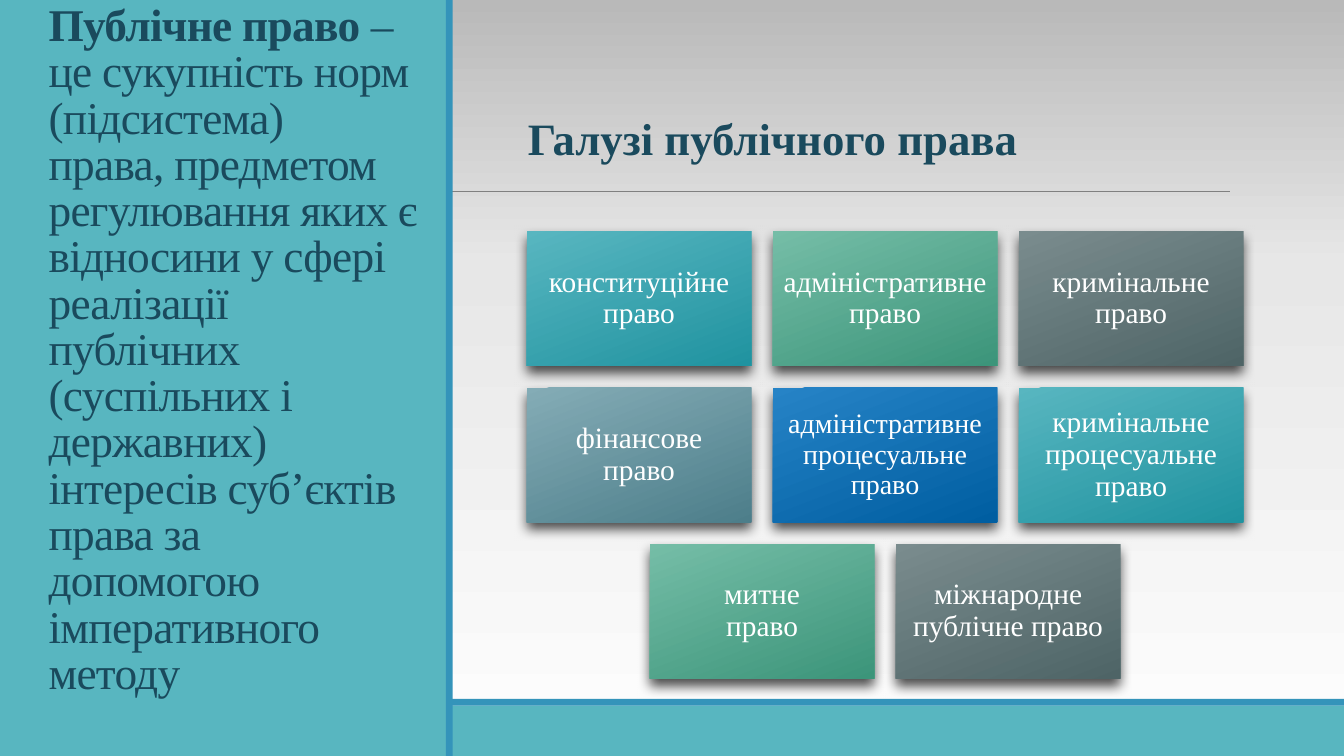
from copy import deepcopy

from lxml.etree import SubElement
from pptx import Presentation
from pptx.dml.color import RGBColor
from pptx.enum.shapes import MSO_CONNECTOR as Connector, MSO_SHAPE as Shape
from pptx.enum.text import MSO_ANCHOR as Anchor, MSO_AUTO_SIZE as AutoSize, PP_ALIGN as Align
from pptx.oxml.ns import qn
from pptx.util import Cm, Pt

COLORS = {
    "panel": "58B6C0", "edge": "3494BA", "rule": "808080",
    "ink": "1A4A5D", "white": "FFFFFF", "shadow": "000000",
}
BACKDROP = [(0, "FEFEFE"), (0.65, "E7E7E7"), (1, "B9B9B9")]
CARD_GRADIENTS = [
    ("58B6C0", "2093A0"), ("75BDA7", "3C957A"), ("7A8C8E", "4E6466"),
    ("84ACB6", "4D7E8A"), ("2683C6", "005EA1"),
]
BRANCHES = [
    ["конституційне право", "адміністративне право", "кримінальне право"],
    ["фінансове\vправо", "адміністративне процесуальне право",
     "кримінальне процесуальне право"],
    ["митне\vправо", "міжнародне публічне право"],
]
TERM = "Публічне право "
DEFINITION = (
    "– це сукупність норм (підсистема)\vправа, предметом регулювання яких є "
    "відносини у сфері реалізації публічних (суспільних і державних) інтересів "
    "суб’єктів права за допомогою імперативного методу"
)
FONT = "Times New Roman"
WIDTH, HEIGHT = 33.87, 19.05
PANEL_WIDTH, FOOTER_HEIGHT, EDGE = 11.24, 1.27, 0.17


def set_all(target, formats):
    for name, value in formats.items():
        setattr(target, name, value)


def add_run(paragraph, text, size, color, bold=False):
    paragraph.add_run().text = text
    # A line break splits the text, so every run is styled
    run = paragraph.runs[-1]
    set_all(run.font, {"name": FONT, "size": Pt(size), "bold": bold})
    run.font.color.rgb = RGBColor.from_string(COLORS[color])
    return run


def add_lines(paragraph, text, size, color, bold=False):
    runs = []
    for number, line in enumerate(text.split("\v")):
        if number:
            paragraph.add_line_break()
        runs.append(add_run(paragraph, line, size, color, bold))
    return runs


def set_gradient(fill, stops, angle):
    fill.gradient_angle = angle
    for stop, (position, color) in zip(fill.gradient_stops, stops):
        stop.position = position
        stop.color.rgb = RGBColor.from_string(color)


def draw_backdrop(slide):
    fill = slide.background.fill
    fill.gradient()
    stop_list = next(slide.element.iter(qn("a:gsLst")))
    stop_list.append(deepcopy(stop_list[-1]))
    set_gradient(fill, BACKDROP, 90)


def add_band(slide, color, left, top, width, height):
    band = slide.shapes.add_shape(Shape.RECTANGLE, Cm(left), Cm(top), Cm(width), Cm(height))
    band.shadow.inherit = False
    band.fill.solid()
    band.fill.fore_color.rgb = RGBColor.from_string(COLORS[color])
    band.line.fill.background()


def draw_frame(slide):
    footer_top = HEIGHT - FOOTER_HEIGHT
    add_band(slide, "panel", 0, footer_top, WIDTH, FOOTER_HEIGHT)
    add_band(slide, "edge", 0, footer_top - EDGE, WIDTH, EDGE)
    # Rule under the heading, starting behind the side panel
    rule = slide.shapes.add_connector(Connector.STRAIGHT, Cm(3.33), Cm(4.83), Cm(31), Cm(4.83))
    rule.line.color.rgb = RGBColor.from_string(COLORS["rule"])
    rule.line.width = Pt(0.5)
    SubElement(rule.element.spPr, qn("a:effectLst"))
    add_band(slide, "panel", 0, 0, PANEL_WIDTH, HEIGHT)
    add_band(slide, "edge", PANEL_WIDTH, 0, EDGE, HEIGHT)


def write_definition(slide, left, top, width, height):
    definition = slide.shapes.title
    set_all(definition, {"left": Cm(left), "top": Cm(top),
                         "width": Cm(width), "height": Cm(height)})
    set_all(definition.text_frame, {"word_wrap": True, "auto_size": AutoSize.NONE,
                                    "vertical_anchor": Anchor.BOTTOM})
    paragraph = definition.text_frame.paragraphs[0]
    set_all(paragraph, {"alignment": Align.LEFT, "line_spacing": 0.85})
    runs = add_lines(paragraph, TERM, 32.4, "ink", True)
    runs += add_lines(paragraph, DEFINITION, 32.4, "ink")
    for run in runs:
        run.font.element.set("spc", "-50") if hasattr(run.font, "element") else \
            run._r.get_or_add_rPr().set("spc", "-50")
    # Bring the definition in front of the panel
    slide.shapes.element.append(definition.element) if hasattr(slide.shapes, "element") else \
        definition.element.getparent().append(definition.element)


def write_heading(slide, left, top, width, height):
    heading = slide.shapes.add_textbox(Cm(left), Cm(top), Cm(width), Cm(height))
    set_all(heading.text_frame, {"word_wrap": False, "auto_size": AutoSize.SHAPE_TO_FIT_TEXT})
    paragraph = heading.text_frame.paragraphs[0]
    set_all(paragraph, {"alignment": Align.CENTER, "line_spacing": 0.9})
    add_run(paragraph, "Галузі публічного права", 32, "ink", True)


def add_card(slide, text, gradient, left, top, width, height):
    card = slide.shapes.add_shape(Shape.RECTANGLE, Cm(left), Cm(top), Cm(width), Cm(height))
    card.fill.gradient()
    set_gradient(card.fill, list(zip((0, 1), gradient)), 291)
    card.line.fill.background()
    # Soft shadow straight below
    card.shadow.inherit = False
    effects = card.element.spPr.find(qn("a:effectLst"))
    shadow = SubElement(effects, qn("a:outerShdw"), blurRad=str(Pt(9)), dist=str(Pt(5)),
                        dir="5400000", rotWithShape="0")
    tint = SubElement(shadow, qn("a:srgbClr"), val=COLORS["shadow"])
    SubElement(tint, qn("a:alpha"), val="70000")
    # Label
    margins = {f"margin_{side}": Cm(0.2) for side in ("left", "top", "right", "bottom")}
    set_all(card.text_frame, {"word_wrap": True, "vertical_anchor": Anchor.MIDDLE, **margins})
    paragraph = card.text_frame.paragraphs[0]
    set_all(paragraph, {"alignment": Align.CENTER, "line_spacing": 0.9})
    size = 20 if text.startswith("адміністративне процесуальне") else 21
    add_lines(paragraph, text, size, "white")


def draw_branches(slide, left, top, width, gap):
    columns = max(len(row) for row in BRANCHES)
    card_width = (width - gap * (columns - 1)) / columns
    card_height = card_width * 0.6
    number = 0
    for row_number, row in enumerate(BRANCHES):
        # Short rows are centred
        indent = (columns - len(row)) * (card_width + gap) / 2
        for column, text in enumerate(row):
            add_card(slide, text, CARD_GRADIENTS[number % len(CARD_GRADIENTS)],
                     left + indent + column * (card_width + gap),
                     top + row_number * (card_height + gap), card_width, card_height)
            number += 1


def main():
    deck = Presentation()
    set_all(deck, {"slide_width": Cm(WIDTH), "slide_height": Cm(HEIGHT)})
    slide = deck.slides.add_slide(deck.slide_layouts[5])
    draw_backdrop(slide)
    draw_frame(slide)
    write_definition(slide, 0.97, 0.66, 9.83, 17.07)
    draw_branches(slide, 13.28, 5.83, 18.05, 0.55)
    write_heading(slide, 13, 2.82, 12.95, 1.5)
    deck.save("out.pptx")


if __name__ == "__main__":
    main()
